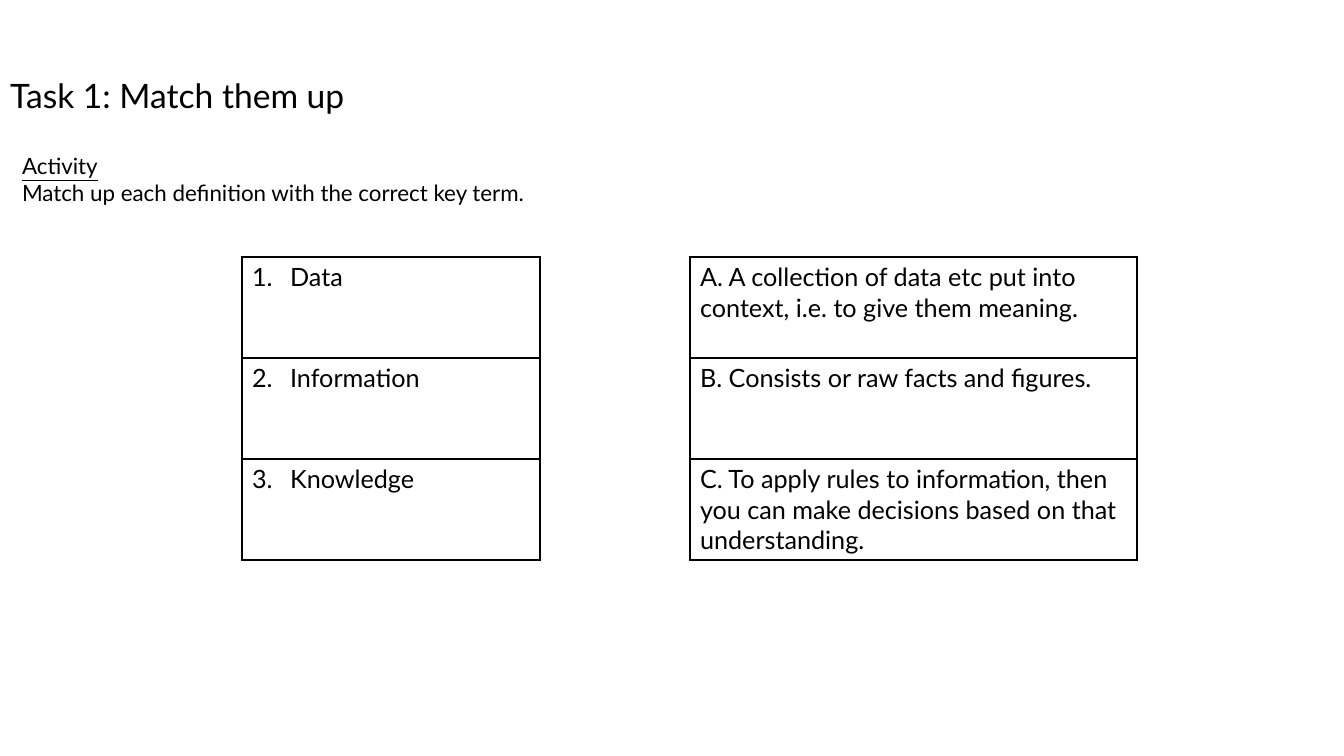
from dataclasses import dataclass

import pptx
import pptx.dml.color
import pptx.enum.text
import pptx.oxml.ns
import pptx.util
from lxml import etree

EMU_PER_PX = 914400 / 100.8


@dataclass(frozen=True)
class Theme:
    font: str = "Lato"
    ink: str = "000000"
    title_size: int = 24
    table_size: int = 18
    activity_size: int = 16
    border_width: int = 1


@dataclass(frozen=True)
class Box:
    left: int
    top: int
    width: int
    height: int


@dataclass(frozen=True)
class MatchRow:
    term: str
    definition: str


THEME = Theme()
SLIDE_SIZE = (1344, 756)
TITLE_BOX = Box(0, 70, 862, 50)
ACTIVITY_BOX = Box(12, 147, 1066, 65)
TABLE_BOX = Box(242, 257, 895, 303)
COLUMN_WIDTHS = (298, 150, 447)
TERM, GAP, DEFINITION = range(3)
NUMBER_INDENT = 38

MATCH_ROWS = (
    MatchRow("Data", "A. A collection of data etc put into context, i.e. to give them meaning."),
    MatchRow("Information", "B. Consists or raw facts and figures."),
    MatchRow("Knowledge", "C. To apply rules to information, then you can make decisions "
                          "based on that understanding."),
)


def px(length: int) -> pptx.util.Emu:
    return pptx.util.Emu(round(length * EMU_PER_PX))


def bounds(box: Box) -> tuple:
    return px(box.left), px(box.top), px(box.width), px(box.height)


def write(paragraph, text: str, *, size: int, underline: bool = False, number: int = 0) -> None:
    """Write one left-aligned paragraph, numbered when number is not zero."""
    run = paragraph.add_run()
    run.text = text
    run.font.name = THEME.font
    run.font.size = pptx.util.Pt(size)
    run.font.underline = underline
    run.font.color.rgb = pptx.dml.color.RGBColor.from_string(THEME.ink)
    paragraph.alignment = pptx.enum.text.PP_ALIGN.LEFT
    paragraph.space_before = pptx.util.Pt(0)
    indent = px(NUMBER_INDENT) if number else 0
    properties = paragraph._p.get_or_add_pPr()
    properties.set("marL", str(indent))
    properties.set("indent", str(-indent))
    if number:
        etree.SubElement(properties, pptx.oxml.ns.qn("a:buAutoNum"),
                         type="arabicPeriod", startAt=str(number))
    else:
        etree.SubElement(properties, pptx.oxml.ns.qn("a:buNone"))


def place(placeholder, box: Box):
    """Move a placeholder and return its text frame, set to start at the top."""
    placeholder.left, placeholder.top, placeholder.width, placeholder.height = bounds(box)
    frame = placeholder.text_frame
    frame.word_wrap = True
    frame.auto_size = pptx.enum.text.MSO_AUTO_SIZE.NONE
    frame.vertical_anchor = pptx.enum.text.MSO_ANCHOR.TOP
    return frame


def set_borders(cell, drawn_sides: str) -> None:
    """Draw the sides named by L, R, T and B; clear the others."""
    qn = pptx.oxml.ns.qn
    properties = cell._tc.get_or_add_tcPr()
    for position, side in enumerate("LRTB"):
        line = etree.Element(qn(f"a:ln{side}"), w=str(pptx.util.Pt(THEME.border_width)))
        if side in drawn_sides:
            fill = etree.SubElement(line, qn("a:solidFill"))
            etree.SubElement(fill, qn("a:srgbClr"), val=THEME.ink)
        else:
            etree.SubElement(line, qn("a:noFill"))
        properties.insert(position, line)


def add_match_table(slide) -> None:
    table = slide.shapes.add_table(len(MATCH_ROWS), len(COLUMN_WIDTHS), *bounds(TABLE_BOX)).table
    table.first_row = table.horz_banding = False
    for column, width in zip(table.columns, COLUMN_WIDTHS):
        column.width = px(width)
    for index, match in enumerate(MATCH_ROWS):
        for column in (TERM, GAP, DEFINITION):
            cell = table.cell(index, column)
            cell.fill.background()
            set_borders(cell, "LR" if column == GAP else "LRTB")
        write(table.cell(index, TERM).text_frame.paragraphs[0], match.term,
              size=THEME.table_size, number=index + 1)
        write(table.cell(index, DEFINITION).text_frame.paragraphs[0], match.definition,
              size=THEME.table_size)


def main() -> None:
    presentation = pptx.Presentation()
    presentation.slide_width, presentation.slide_height = map(px, SLIDE_SIZE)
    slide = presentation.slides.add_slide(presentation.slide_layouts[1])

    title = place(slide.shapes.title, TITLE_BOX)
    write(title.paragraphs[0], "Task 1: Match them up", size=THEME.title_size)

    add_match_table(slide)

    activity = place(slide.placeholders[1], ACTIVITY_BOX)
    write(activity.paragraphs[0], "Activity", size=THEME.activity_size, underline=True)
    write(activity.add_paragraph(), "Match up each definition with the correct key term.",
          size=THEME.activity_size)

    presentation.save("out.pptx")


if __name__ == "__main__":
    main()
